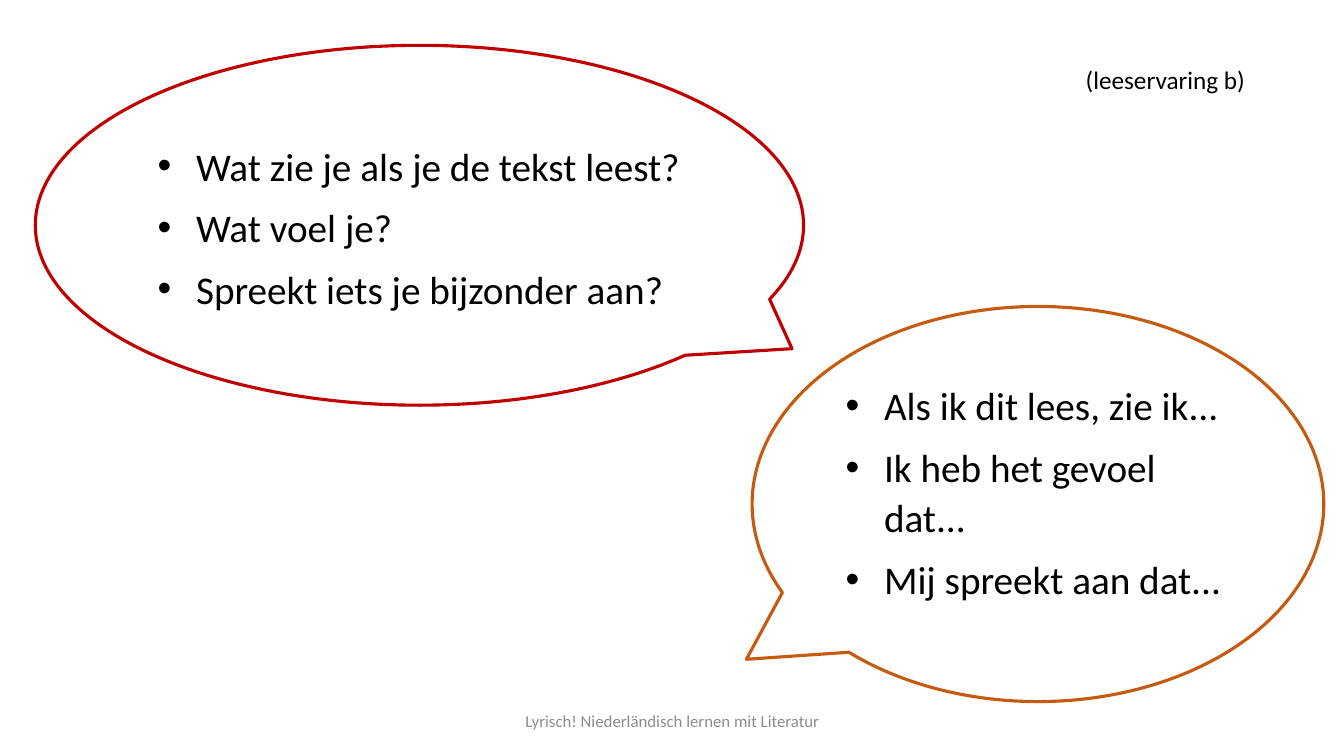
import pptx
import pptx.dml.color
import pptx.enum.shapes
import pptx.enum.text
import pptx.util
from lxml import etree

PX = 9144  # EMU per px, 100 px to the inch
COLORS = {"white": "FFFFFF", "black": "000000", "grey": "8C8C8C",
          "red": "C00000", "orange": "C55A11"}
ALIGN = pptx.enum.text.PP_ALIGN
ANCHOR = pptx.enum.text.MSO_ANCHOR


def rgb(name):
    return pptx.dml.color.RGBColor.from_string(COLORS[name])


def add_text(p, text, size=28, color="black", align=ALIGN.LEFT,
             spacing=None, after=0, indent=0):
    """Fill a paragraph; an indent in px makes it a bullet."""
    p.alignment = align
    p.space_after = pptx.util.Pt(after)
    if spacing:
        p.line_spacing = spacing
    if indent:
        pPr = p._p.get_or_add_pPr()
        pPr.set("marL", str(indent * PX))
        pPr.set("indent", str(-indent * PX))
        ns = pPr.nsmap["a"]
        etree.SubElement(pPr, f"{{{ns}}}buFont", typeface="Arial")
        etree.SubElement(pPr, f"{{{ns}}}buChar", char="•")
    r = p.add_run()
    r.text = text
    r.font.name = "Calibri"
    r.font.size = pptx.util.Pt(size)
    r.font.color.rgb = rgb(color)


class Deck:
    def __init__(self, width, height):
        self.prs = pptx.Presentation()
        self.prs.slide_width = width * PX
        self.prs.slide_height = height * PX
        self.s = self.prs.slides.add_slide(self.prs.slide_layouts[6])

    def label(self, box, text, anchor=ANCHOR.TOP, **fmt):
        tf = self.s.shapes.add_textbox(*(v * PX for v in box)).text_frame
        tf.word_wrap = True
        tf.vertical_anchor = anchor
        add_text(tf.paragraphs[0], text, **fmt)

    def bubble(self, box, tail, color, lines, first_spacing=1.07, bottom=5):
        sp = self.s.shapes.add_shape(
            pptx.enum.shapes.MSO_SHAPE.OVAL_CALLOUT, *(v * PX for v in box))
        sp.adjustments[0], sp.adjustments[1] = tail
        sp.shadow.inherit = False
        sp.fill.solid()
        sp.fill.fore_color.rgb = rgb("white")
        sp.line.color.rgb = rgb(color)
        sp.line.width = pptx.util.Pt(2.25)
        tf = sp.text_frame
        tf.word_wrap = True
        tf.vertical_anchor = ANCHOR.MIDDLE
        tf.margin_bottom = bottom * PX
        for i, line in enumerate(lines):
            p = tf.add_paragraph() if i else tf.paragraphs[0]
            add_text(p, line, spacing=1.07 if i else first_spacing,
                     after=8, indent=38)


def main():
    deck = Deck(1333, 750)

    # Footer
    deck.label((442, 695, 450, 40), "Lyrisch! Niederländisch lernen mit Literatur",
               anchor=ANCHOR.MIDDLE, size=12, color="grey", align=ALIGN.CENTER)

    # Questions
    deck.bubble((35, 45, 762, 357), (0.485, 0.343), "red",
                ["Wat zie je als je de tekst leest?",
                 "Wat voel je?",
                 "Spreekt iets je bijzonder aan?"])

    # Sentence starters, set slightly above the middle
    deck.bubble((746, 304, 567, 392), (-0.51, 0.393), "orange",
                ["Als ik dit lees, zie ik...",
                 "Ik heb het gevoel dat...",
                 "Mij spreekt aan dat..."],
                first_spacing=1.15, bottom=36)

    # Reading experience tag
    deck.label((1067, 59, 214, 40), "(leeservaring b)", size=18)

    deck.prs.save("out.pptx")


if __name__ == "__main__":
    main()
